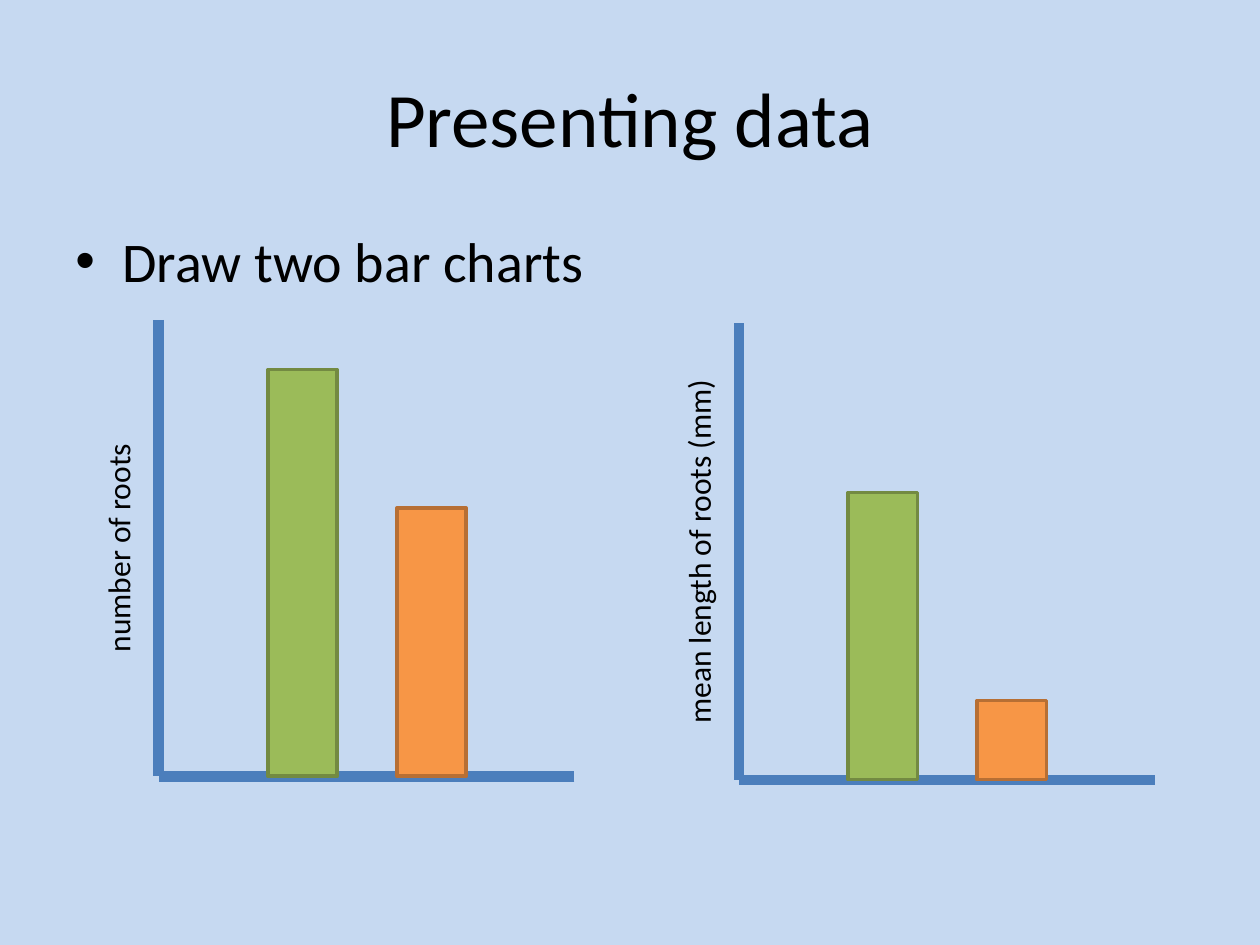
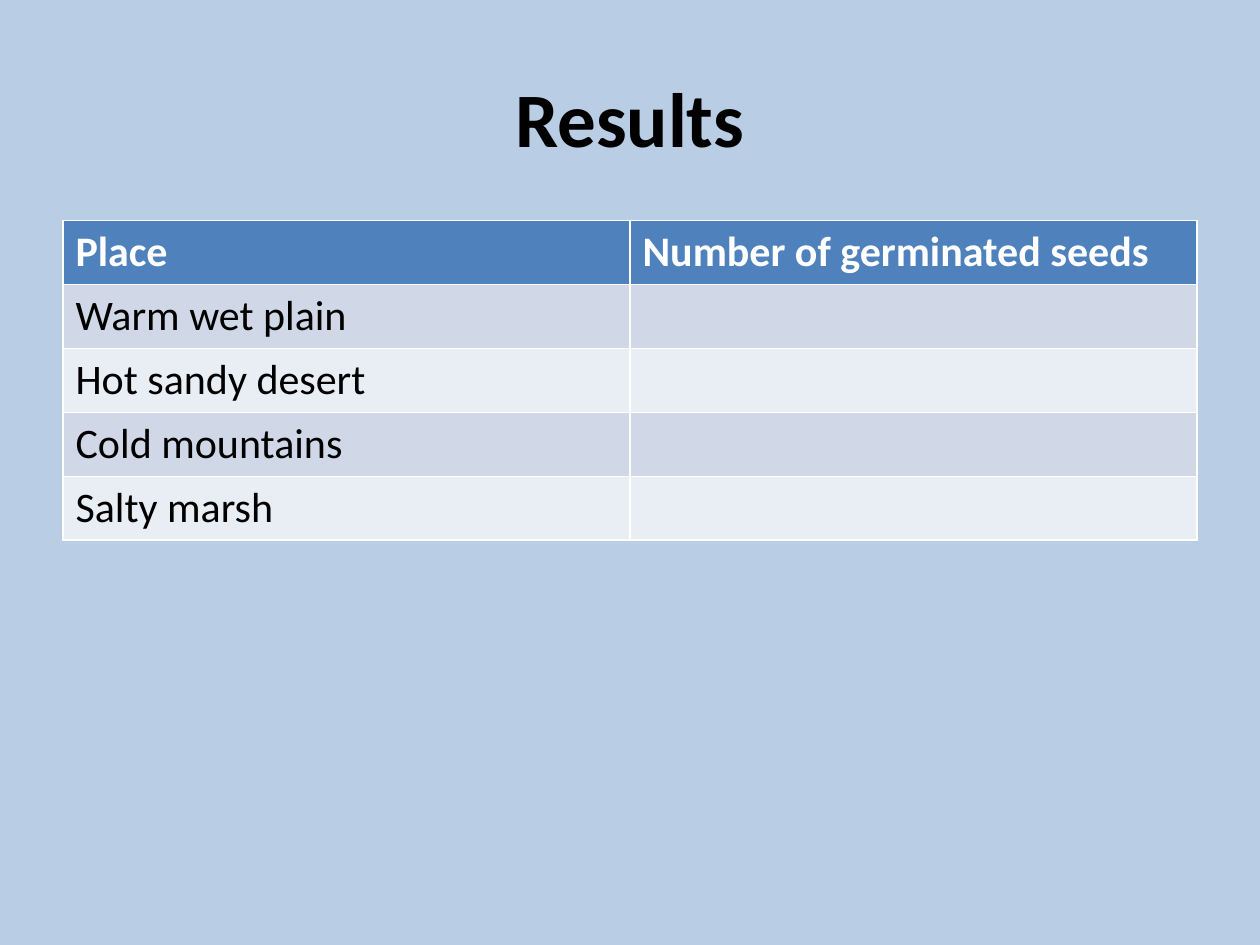
from pptx import Presentation
from pptx.dml.color import RGBColor
from pptx.enum.shapes import MSO_CONNECTOR, MSO_SHAPE
from pptx.enum.text import MSO_ANCHOR, PP_ALIGN
from pptx.oxml.ns import qn
from pptx.util import Cm, Pt
from lxml.etree import SubElement

FONT = "Calibri"
BLACK, WHITE = "000000", "FFFFFF"
AXIS_BLUE, HEADER_BLUE = "4B7EBC", "4F81BD"
ROW_FILLS = ["D0D8E8", "E9EDF4"]
MARGIN, CONTENT_TOP, CONTENT_WIDTH = 1.27, 4.45, 22.86


def rgb(hex_color):
    return RGBColor.from_string(hex_color)


def write(frame, text, size, color=BLACK, bold=False, align=PP_ALIGN.LEFT):
    """Fill a text frame with one formatted paragraph and return it."""
    frame.text = text
    paragraph = frame.paragraphs[0]
    paragraph.alignment = align
    font = paragraph.font
    font.name, font.size, font.bold = FONT, Pt(size), bold
    font.color.rgb = rgb(color)
    return paragraph


prs = Presentation()
prs.slide_width, prs.slide_height = Cm(25.4), Cm(19.05)

# Backgrounds and titles
slides = []
for heading, background, bold in [
    ("Presenting data", "C6D9F1", False),
    ("Results", "B9CDE5", True),
]:
    slide = prs.slides.add_slide(prs.slide_layouts[5])
    slide.background.fill.solid()
    slide.background.fill.fore_color.rgb = rgb(background)
    title = slide.shapes.title
    title.left, title.top = Cm(MARGIN), Cm(0.76)
    title.width, title.height = Cm(CONTENT_WIDTH), Cm(3.18)
    title.text_frame.vertical_anchor = MSO_ANCHOR.MIDDLE
    write(title.text_frame, heading, 44, bold=bold, align=PP_ALIGN.CENTER)
    slides.append(slide)
presenting, results = slides

# Presenting data: the task
task = presenting.shapes.add_textbox(
    Cm(MARGIN), Cm(CONTENT_TOP), Cm(CONTENT_WIDTH), Cm(12.57))
task.text_frame.word_wrap = True
bullet = write(task.text_frame, "Draw two bar charts", 32)
properties = bullet._p.get_or_add_pPr()
properties.set("marL", str(Cm(0.95)))
properties.set("indent", str(-Cm(0.95)))
SubElement(properties, qn("a:buFont"), typeface="Arial")
SubElement(properties, qn("a:buChar"), char="•")

# Presenting data: two sketched bar charts, each placed from its origin
AXIS_HEIGHT, AXIS_WIDTH = 9.2, 8.38
BAR_WIDTH = 1.4
BAR_STYLES = [(2.2, "9BBB59", "738A42"), (4.8, "F79646", "B76F34")]
LABEL_HEIGHT, LABEL_GAP = 1.02, 0.82

for origin_x, origin_y, bar_heights, label, label_length in [
    (3.2, 15.65, (8.2, 5.41), "number of roots", 4.78),
    (14.9, 15.72, (5.79, 1.6), "mean length of roots (mm)", 7.54),
]:
    for end_x, end_y in [
        (origin_x, origin_y - AXIS_HEIGHT),
        (origin_x + AXIS_WIDTH, origin_y),
    ]:
        axis = presenting.shapes.add_connector(
            MSO_CONNECTOR.STRAIGHT,
            Cm(end_x), Cm(end_y), Cm(origin_x), Cm(origin_y))
        axis.line.color.rgb = rgb(AXIS_BLUE)
        axis.line.width = Pt(6)
        SubElement(axis._element.spPr, qn("a:effectLst"))

    for bar_height, (offset, fill, outline) in zip(bar_heights, BAR_STYLES):
        bar = presenting.shapes.add_shape(
            MSO_SHAPE.RECTANGLE,
            Cm(origin_x + offset), Cm(origin_y - bar_height),
            Cm(BAR_WIDTH), Cm(bar_height))
        bar.shadow.inherit = False
        bar.fill.solid()
        bar.fill.fore_color.rgb = rgb(fill)
        bar.line.color.rgb = rgb(outline)
        bar.line.width = Pt(2)

    axis_label = presenting.shapes.add_textbox(
        Cm(origin_x - LABEL_GAP - label_length / 2),
        Cm(origin_y - AXIS_HEIGHT / 2 - LABEL_HEIGHT / 2),
        Cm(label_length), Cm(LABEL_HEIGHT))
    axis_label.rotation = 270
    axis_label.text_frame.word_wrap = False
    write(axis_label.text_frame, label, 18, align=PP_ALIGN.CENTER)

# Results: table with an empty column to fill in
rows = [
    ("Place", "Number of germinated seeds"),
    ("Warm wet plain", ""),
    ("Hot sandy desert", ""),
    ("Cold mountains", ""),
    ("Salty marsh", ""),
]
seed_table = results.shapes.add_table(
    len(rows), 2, Cm(MARGIN), Cm(CONTENT_TOP),
    Cm(CONTENT_WIDTH), Cm(1.27 * len(rows))).table
for row_index, row in enumerate(rows):
    is_header = row_index == 0
    for column_index, text in enumerate(row):
        cell = seed_table.cell(row_index, column_index)
        cell.fill.solid()
        cell.fill.fore_color.rgb = rgb(
            HEADER_BLUE if is_header else ROW_FILLS[(row_index - 1) % 2])
        write(cell.text_frame, text, 24, WHITE if is_header else BLACK, is_header)

prs.save("out.pptx")
